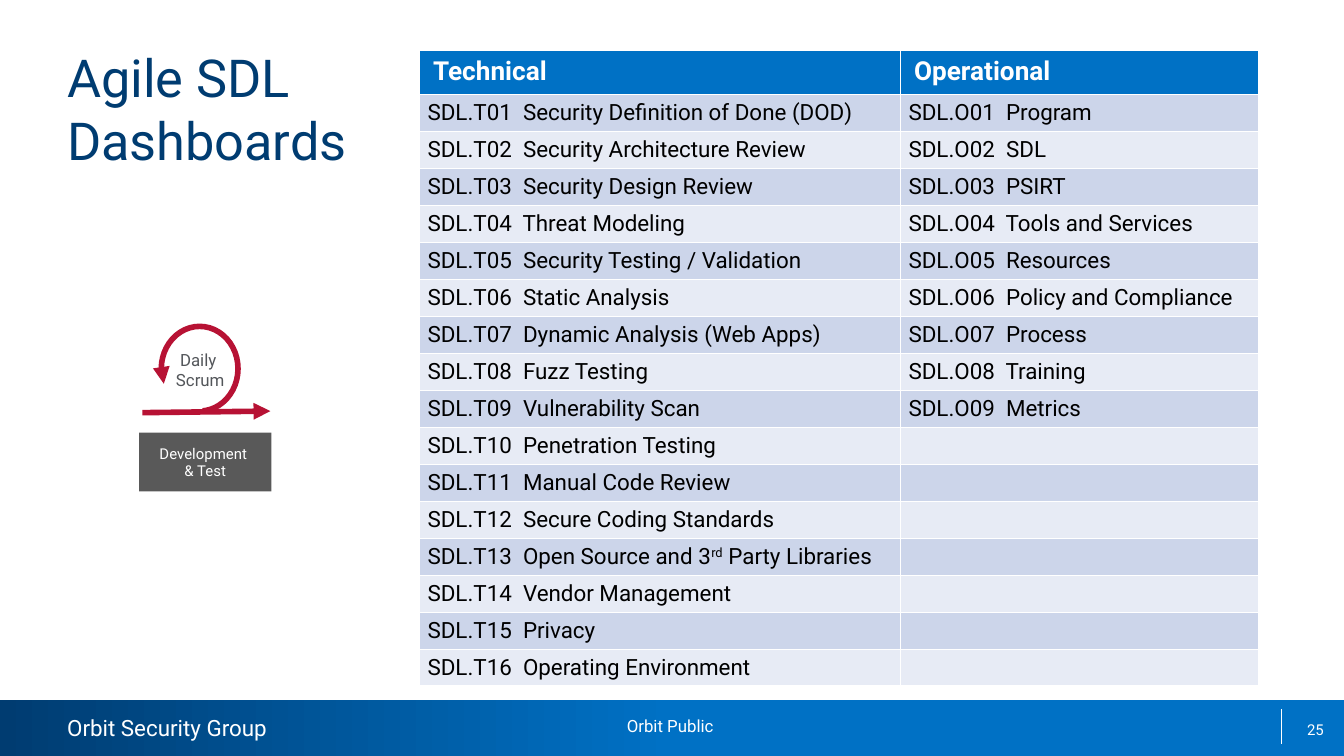
"""Build the Agile SDL dashboards slide with its table and scrum diagram."""
from dataclasses import dataclass
from typing import Any

from lxml import etree
from pptx import Presentation
from pptx.dml import color
from pptx.enum import shapes, text
from pptx.oxml import ns
from pptx.util import Cm, Pt

COLORS = {
    "navy": "003C71", "blue": "0071C5", "white": "FFFFFF", "black": "000000",
    "red": "B71234", "gray": "53565A", "box": "595959",
    "odd": "CCD5EA", "even": "E7EBF5",
}
FONT = "Roboto"
LEFT, CENTER, RIGHT = text.PP_ALIGN.LEFT, text.PP_ALIGN.CENTER, text.PP_ALIGN.RIGHT
TOP, MIDDLE = text.MSO_ANCHOR.TOP, text.MSO_ANCHOR.MIDDLE
HEADER_HEIGHT, ROW_HEIGHT = 0.77, 0.7


@dataclass(frozen=True)
class Area:
    left: float
    top: float
    width: float
    height: float

    def lengths(self) -> list[Cm]:
        return [Cm(n) for n in (self.left, self.top, self.width, self.height)]


@dataclass(frozen=True)
class Style:
    size: float
    color: str
    align: Any = LEFT
    bold: bool = False


@dataclass(frozen=True)
class Label:
    words: str
    area: Area
    style: Style
    anchor: Any = TOP
    inset: bool = False
    wrap: bool = True


@dataclass(frozen=True)
class Column:
    title: str
    letter: str
    width: float
    topics: list[str]

    def entry(self, number: int) -> str:
        if number > len(self.topics):
            return ""
        return f"SDL.{self.letter}{number:02}  {self.topics[number - 1]}"


COLUMNS = [
    Column("Technical", "T", 9.09, [
        "Security Definition of Done (DOD)", "Security Architecture Review",
        "Security Design Review", "Threat Modeling",
        "Security Testing / Validation", "Static Analysis",
        "Dynamic Analysis (Web Apps)", "Fuzz Testing", "Vulnerability Scan",
        "Penetration Testing", "Manual Code Review", "Secure Coding Standards",
        "Open Source and 3^rd^ Party Libraries", "Vendor Management",
        "Privacy", "Operating Environment",
    ]),
    Column("Operational", "O", 6.77, [
        "Program", "SDL", "PSIRT", "Tools and Services", "Resources",
        "Policy and Compliance", "Process", "Training", "Metrics",
    ]),
]
FOOTER_LABELS = [
    Label("Orbit Security Group", Area(1.27, 13.49, 3.86, 0.51),
          Style(12, "white"), wrap=False),
    Label("25", Area(19.1, 13.41, 5.92, 0.76), Style(8, "white", RIGHT), MIDDLE),
    Label("Orbit Public", Area(8.69, 13.41, 7.95, 0.76),
          Style(9, "white", CENTER), inset=True),
]
SCRUM_LABEL = Label("Daily \vScrum", Area(2.82, 6.48, 1.93, 1.02),
                    Style(9, "gray", CENTER), inset=True, wrap=False)


def rgb(name: str) -> color.RGBColor:
    return color.RGBColor.from_string(COLORS[name])


def format_text(frame: Any, style: Style) -> None:
    for para in frame.paragraphs:
        para.alignment = style.align
        para.font.name = FONT
        para.font.size = Pt(style.size)
        para.font.bold = style.bold
        para.font.color.rgb = rgb(style.color)


def clear_insets(frame: Any) -> None:
    frame.margin_left = frame.margin_right = 0
    frame.margin_top = frame.margin_bottom = 0


def add_label(parent: Any, label: Label) -> None:
    frame = parent.add_textbox(*label.area.lengths()).text_frame
    frame.text = label.words
    frame.word_wrap = label.wrap
    frame.vertical_anchor = label.anchor
    if not label.inset:
        clear_insets(frame)
    format_text(frame, label.style)


def add_shape(parent: Any, preset: Any, area: Area) -> Any:
    shape = parent.add_shape(preset, *area.lengths())
    shape.shadow.inherit = False
    shape.line.fill.background()
    return shape


def draw_line(shape: Any, name: str, width: float, arrow: str = "") -> None:
    shape.line.color.rgb = rgb(name)
    shape.line.width = Pt(width)
    if arrow:
        line = shape.line._get_or_add_ln()
        etree.SubElement(line, ns.qn(f"a:{arrow}"), type="triangle")


def add_line(parent: Any, start: tuple[float, float], end: tuple[float, float]) -> Any:
    line = parent.add_connector(shapes.MSO_CONNECTOR.STRAIGHT,
                                *[Cm(n) for n in start + end])
    etree.SubElement(line._element.spPr, ns.qn("a:effectLst"))
    return line


def add_footer(parent: Any) -> None:
    band = add_shape(parent, shapes.MSO_SHAPE.RECTANGLE, Area(0, 13.23, 25.4, 1.06))
    band.fill.gradient()
    band.fill.gradient_angle = 0
    for stop, name, position in zip(band.fill.gradient_stops, ("navy", "blue"), (0, 0.5)):
        stop.color.rgb = rgb(name)
        stop.position = position
    draw_line(add_line(parent, (24.22, 13.41), (24.22, 14.07)), "white", 0.75)
    for label in FOOTER_LABELS:
        add_label(parent, label)


def fill_cell(cell: Any, words: str, style: Style, fill: str) -> None:
    cell.fill.solid()
    cell.fill.fore_color.rgb = rgb(fill)
    para = cell.text_frame.paragraphs[0]
    if words:
        for index, part in enumerate(words.split("^")):
            span = para.add_run()
            span.text = part
            if index % 2:
                span.font._element.set("baseline", "30000")
    else:
        para._p.get_or_add_endParaRPr().set("sz", str(style.size * 100))
    format_text(cell.text_frame, style)


def add_dashboard_table(parent: Any) -> None:
    count = max(len(column.topics) for column in COLUMNS)
    width = sum(column.width for column in COLUMNS)
    area = Area(7.93, 0.94, width, HEADER_HEIGHT + count * ROW_HEIGHT)
    table = parent.add_table(count + 1, len(COLUMNS), *area.lengths()).table
    for index, row in enumerate(table.rows):
        row.height = Cm(ROW_HEIGHT if index else HEADER_HEIGHT)
    for position, column in enumerate(COLUMNS):
        table.columns[position].width = Cm(column.width)
        fill_cell(table.cell(0, position), column.title,
                  Style(14, "white", bold=True), "blue")
        for number in range(1, count + 1):
            cell = table.cell(number, position)
            cell.vertical_anchor = MIDDLE
            cell.margin_left = cell.margin_right = Cm(0.15)
            cell.margin_top = cell.margin_bottom = 0
            fill_cell(cell, column.entry(number), Style(12, "black"),
                      "odd" if number % 2 else "even")


def add_scrum_diagram(parent: Any) -> None:
    group = parent.add_group_shape().shapes
    loop = add_shape(group, shapes.MSO_SHAPE.ARC, Area(3.05, 6.17, 1.45, 1.6))
    loop.adjustments[0], loop.adjustments[1] = 94.3, 51.54
    loop.fill.background()
    draw_line(loop, "red", 3, "headEnd")
    draw_line(add_line(group, (2.69, 7.8), (5.11, 7.77)), "red", 3, "tailEnd")
    add_label(group, SCRUM_LABEL)
    box = add_shape(group, shapes.MSO_SHAPE.RECTANGLE, Area(2.63, 8.18, 2.5, 1.11))
    box.fill.solid()
    box.fill.fore_color.rgb = rgb("box")
    box.text_frame.text = "Development \n& Test"
    box.text_frame.word_wrap = False
    box.text_frame.vertical_anchor = MIDDLE
    format_text(box.text_frame, Style(8, "white", CENTER))


def main() -> None:
    deck = Presentation()
    deck.slide_width, deck.slide_height = Cm(25.4), Cm(14.29)
    page = deck.slides.add_slide(deck.slide_layouts[5])
    add_footer(page.shapes)
    title = page.shapes.title
    title.left, title.top, title.width, title.height = Area(1.27, 0.86, 22.86, 2.41).lengths()
    title.text_frame.text = "Agile SDL\vDashboards"
    title.text_frame.vertical_anchor = TOP
    clear_insets(title.text_frame)
    format_text(title.text_frame, Style(28, "navy"))
    add_dashboard_table(page.shapes)
    add_scrum_diagram(page.shapes)
    deck.save("out.pptx")


if __name__ == "__main__":
    main()
